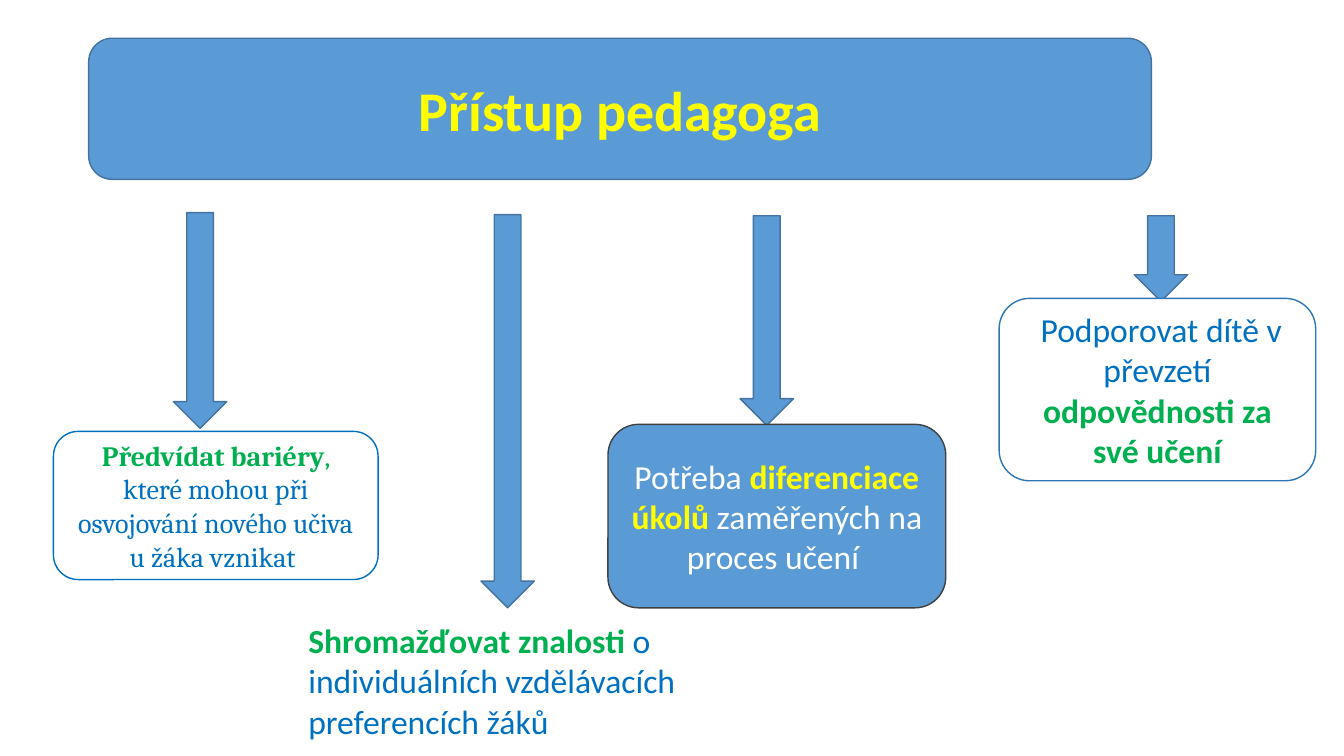
import pptx
import pptx.util
import pptx.dml.color
import pptx.enum.shapes
import pptx.enum.text

Inches = pptx.util.Inches
Shapes = pptx.enum.shapes.MSO_SHAPE
Align = pptx.enum.text.PP_ALIGN
Anchor = pptx.enum.text.MSO_ANCHOR

BLUE, EDGE, WHITE = "5B9BD5", "43739E", "FFFFFF"
YELLOW, GREEN, INK = "FFFF00", "00B050", "0070C0"


def color(value):
    return pptx.dml.color.RGBColor.from_string(value)


class Diagram:
    def __init__(self, slide, font="Calibri", size=24):
        self.slide = slide
        self.font = font
        self.size = size

    def shape(self, kind, place, fill, line):
        shape = self.slide.shapes.add_shape(kind, *map(Inches, place))
        shape.shadow.inherit = False
        shape.fill.solid()
        shape.fill.fore_color.rgb = color(fill)
        shape.line.color.rgb = color(line)
        shape.line.width = pptx.util.Pt(1)
        return shape

    def fill_text(self, box, spans, align, font=None, size=None):
        frame = box.text_frame
        frame.word_wrap = True
        para = frame.paragraphs[0]
        para.alignment = align
        for text, ink, bold in spans:
            span = para.add_run()
            span.text = text
            span.font.name = font or self.font
            span.font.size = pptx.util.Pt(size or self.size)
            span.font.bold = bold
            span.font.color.rgb = color(ink)

    def card(self, place, fill, line, spans, font=None, size=None):
        box = self.shape(Shapes.ROUNDED_RECTANGLE, place, fill, line)
        box.text_frame.vertical_anchor = Anchor.MIDDLE
        self.fill_text(box, spans, Align.CENTER, font, size)

    def arrow(self, left, top, height):
        self.shape(Shapes.DOWN_ARROW, (left, top, 0.53, height), BLUE, EDGE)

    def label(self, place, spans):
        box = self.slide.shapes.add_textbox(*map(Inches, place))
        self.fill_text(box, spans, Align.LEFT)


def main():
    deck = pptx.Presentation()
    deck.slide_width, deck.slide_height = Inches(13.33), Inches(7.5)
    diagram = Diagram(deck.slides.add_slide(deck.slide_layouts[6]))

    diagram.card((0.88, 0.38, 10.54, 1.4), BLUE, EDGE,
                 [("Přístup pedagoga", YELLOW, True)], size=40)

    for left, top, height in ((4.77, 2.13, 3.9), (1.72, 2.11, 2.14),
                              (7.34, 2.14, 2.08), (11.25, 2.14, 0.85)):
        diagram.arrow(left, top, height)

    diagram.label((2.96, 6.1, 4.27, 1.31), [
        ("Shromažďovat znalosti ", GREEN, True),
        ("o individuálních vzdělávacích preferencích žáků", INK, False)])

    diagram.card((0.53, 4.28, 3.22, 1.47), WHITE, INK, [
        ("Předvídat bariéry", GREEN, True),
        (", ", GREEN, False),
        ("které mohou při osvojování nového učiva u žáka vznikat ", INK, False),
    ], font="Cambria", size=20)

    diagram.card((6.03, 4.21, 3.35, 1.82), BLUE, "404040", [
        ("Potřeba ", WHITE, False),
        ("diferenciace úkolů ", YELLOW, True),
        ("zaměřených na proces učení ", WHITE, False)])

    diagram.card((9.91, 2.96, 3.14, 1.81), WHITE, "2E75B6", [
        (" Podporovat dítě v převzetí ", INK, False),
        ("odpovědnosti za své učení", GREEN, True)])

    deck.save("out.pptx")


if __name__ == "__main__":
    main()
